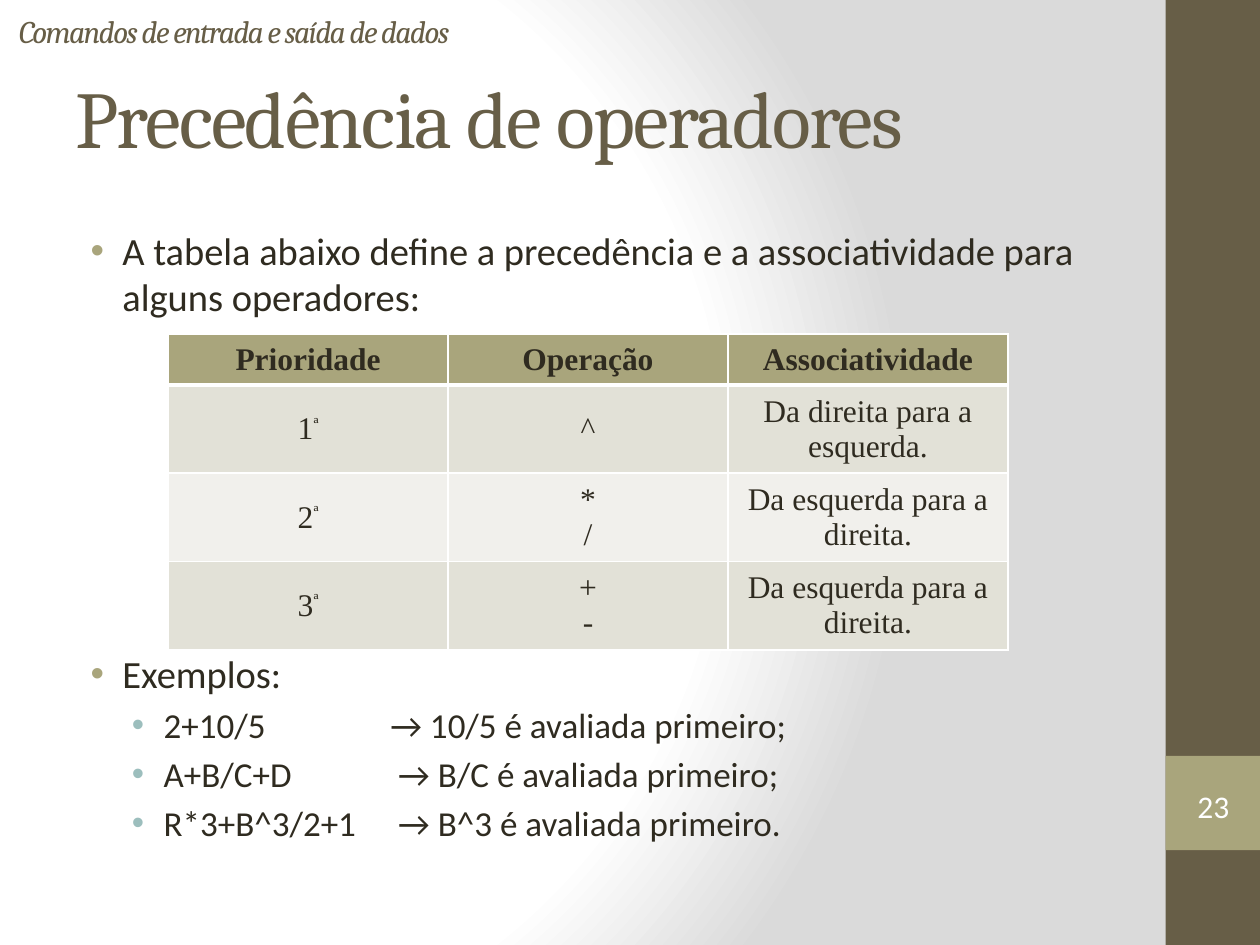
from dataclasses import dataclass
from typing import Any

from pptx import Presentation
from pptx.dml.color import RGBColor
from pptx.enum.shapes import MSO_SHAPE
from pptx.enum.text import MSO_ANCHOR, PP_ALIGN
from pptx.oxml import parse_xml
from pptx.oxml.ns import nsdecls
from pptx.util import Cm, Pt

COLORS = {
    "brown": "675E47",
    "olive": "A9A57C",
    "teal": "9CBEBD",
    "ink": "2F2B20",
    "white": "FFFFFF",
    "gray": "DADADA",
    "band_dark": "E2E1D7",
    "band_light": "F1F0EC",
}
TITLE = {"name": "Cambria", "size": Pt(46)}
HEADER = {"name": "Cambria", "size": Pt(18), "italic": True}
BODY = {"name": "Calibri", "size": Pt(22)}
EXAMPLE = {"name": "Calibri", "size": Pt(20)}
NUMBER = {"name": "Calibri", "size": Pt(18)}
CELL = {"name": "Times New Roman", "size": Pt(18), "bold": False}
HEADING = {**CELL, "bold": True}


@dataclass(frozen=True)
class Box:
    left: float
    top: float
    width: float
    height: float

    def lengths(self) -> list[Cm]:
        return [Cm(value) for value in (self.left, self.top, self.width, self.height)]


@dataclass(frozen=True)
class Bullet:
    text: str
    style: dict[str, Any]
    color: str
    indent: float


@dataclass(frozen=True)
class Row:
    cells: tuple[str, str, str]
    fill: str
    style: dict[str, Any]
    height: float
    top_line: float = 1
    bottom_line: float = 1


BANDS = [
    (Box(23.5, 0, 1.9, 19.05), "brown"),
    (Box(23.5, 15.24, 1.9, 1.9), "olive"),
]
INTRODUCTION = [
    Bullet("A tabela abaixo define a precedência e a associatividade para alguns operadores:",
           BODY, "olive", 0.95),
]
EXAMPLES = [
    Bullet("Exemplos:", BODY, "olive", 0.95),
    Bullet("2+10/5\t\t→ 10/5 é avaliada primeiro;", EXAMPLE, "teal", 1.78),
    Bullet("A+B/C+D\t\t → B/C é avaliada primeiro;", EXAMPLE, "teal", 1.78),
    Bullet("R*3+B^3/2+1\t → B^3 é avaliada primeiro.", EXAMPLE, "teal", 1.78),
]
ROWS = [
    Row(("Prioridade", "Operação", "Associatividade"), "olive", HEADING, 1.03, bottom_line=3),
    Row(("1ª", "^", "Da direita para a esquerda."), "band_dark", CELL, 1.78, top_line=3),
    Row(("2ª", "*\n/", "Da esquerda para a direita."), "band_light", CELL, 1.78),
    Row(("3ª", "+\n-", "Da esquerda para a direita."), "band_dark", CELL, 1.78),
]


def rgb(color: str) -> RGBColor:
    return RGBColor.from_string(COLORS[color])


def apply_font(font, style: dict[str, Any], color: str) -> None:
    for name, value in style.items():
        setattr(font, name, value)
    font.color.rgb = rgb(color)


def set_background(slide) -> None:
    stops = "".join(
        f'<a:gs pos="{position * 1000}"><a:srgbClr val="{COLORS[color]}"/></a:gs>'
        for position, color in ((0, "white"), (75, "white"), (100, "gray"))
    )
    slide._element.cSld.insert(0, parse_xml(
        f'<p:bg {nsdecls("p", "a")}><p:bgPr><a:gradFill rotWithShape="1">'
        f'<a:gsLst>{stops}</a:gsLst><a:path path="circle">'
        '<a:fillToRect l="20000" t="50000" r="100000" b="50000"/></a:path>'
        '</a:gradFill><a:effectLst/></p:bgPr></p:bg>'
    ))


def add_band(slide, box: Box, color: str) -> None:
    shape = slide.shapes.add_shape(MSO_SHAPE.RECTANGLE, *box.lengths())
    shape.shadow.inherit = False
    shape.fill.solid()
    shape.fill.fore_color.rgb = rgb(color)
    shape.line.fill.background()


def add_text_frame(slide, box: Box, anchor=MSO_ANCHOR.TOP):
    frame = slide.shapes.add_textbox(*box.lengths()).text_frame
    frame.word_wrap = True
    frame.vertical_anchor = anchor
    return frame


def add_heading(slide, box: Box, text: str, style: dict[str, Any]) -> None:
    frame = add_text_frame(slide, box, MSO_ANCHOR.MIDDLE)
    run = frame.paragraphs[0].add_run()
    run.text = text
    apply_font(run.font, style, "brown")
    run._r.get_or_add_rPr().set("spc", "-100")


def add_bullets(slide, box: Box, bullets: list[Bullet]) -> None:
    frame = add_text_frame(slide, box)
    for index, bullet in enumerate(bullets):
        paragraph = frame.add_paragraph() if index else frame.paragraphs[0]
        properties = paragraph._p.get_or_add_pPr()
        properties.set("marL", str(Cm(bullet.indent)))
        properties.set("indent", str(Cm(-0.64)))
        for content in (
            f'<a:buClr {nsdecls("a")}><a:srgbClr val="{COLORS[bullet.color]}"/></a:buClr>',
            f'<a:buFont {nsdecls("a")} typeface="Arial"/>',
            f'<a:buChar {nsdecls("a")} char="•"/>',
        ):
            properties.append(parse_xml(content))
        if index:
            paragraph.space_before = Pt(4)
        run = paragraph.add_run()
        run.text = bullet.text
        apply_font(run.font, bullet.style, "ink")


def set_borders(cell, row: Row) -> None:
    widths = {"lnL": 1, "lnR": 1, "lnT": row.top_line, "lnB": row.bottom_line}
    for index, (side, width) in enumerate(widths.items()):
        cell._tc.get_or_add_tcPr().insert(index, parse_xml(
            f'<a:{side} {nsdecls("a")} w="{Pt(width)}"><a:solidFill>'
            f'<a:srgbClr val="{COLORS["white"]}"/></a:solidFill></a:{side}>'
        ))


def fill_cell(cell, text: str, row: Row) -> None:
    cell.fill.solid()
    cell.fill.fore_color.rgb = rgb(row.fill)
    cell.vertical_anchor = MSO_ANCHOR.MIDDLE
    set_borders(cell, row)
    for index, line in enumerate(text.split("\n")):
        frame = cell.text_frame
        paragraph = frame.add_paragraph() if index else frame.paragraphs[0]
        paragraph.alignment = PP_ALIGN.CENTER
        pieces = [line[:-1], "ª"] if line.endswith("ª") else [line]
        for piece in pieces:
            run = paragraph.add_run()
            run.text = piece
            apply_font(run.font, row.style, "ink")
            if piece == "ª":
                run._r.get_or_add_rPr().set("baseline", "30000")


def add_precedence_table(slide, box: Box) -> None:
    table = slide.shapes.add_table(len(ROWS), 3, *box.lengths()).table
    table.horz_banding = False
    for column in table.columns:
        column.width = Cm(box.width / 3)
    for row_index, row in enumerate(ROWS):
        table.rows[row_index].height = Cm(row.height)
        for column_index, text in enumerate(row.cells):
            fill_cell(table.cell(row_index, column_index), text, row)


def add_slide_number(slide, box: Box, text: str) -> None:
    shape = slide.shapes.add_shape(MSO_SHAPE.DOUBLE_BRACKET, *box.lengths())
    shape.shadow.inherit = False
    shape.fill.background()
    shape.line.fill.background()
    frame = shape.text_frame
    for side in ("left", "top", "right", "bottom"):
        setattr(frame, f"margin_{side}", 0)
    frame.vertical_anchor = MSO_ANCHOR.MIDDLE
    paragraph = frame.paragraphs[0]
    paragraph.alignment = PP_ALIGN.CENTER
    run = paragraph.add_run()
    run.text = text
    apply_font(run.font, NUMBER, "white")


def main() -> None:
    presentation = Presentation()
    presentation.slide_width, presentation.slide_height = Cm(25.4), Cm(19.05)
    slide = presentation.slides.add_slide(presentation.slide_layouts[6])
    set_background(slide)
    for box, color in BANDS:
        add_band(slide, box, color)
    add_heading(slide, Box(1.27, 0.76, 21.17, 3.18), "Precedência de operadores", TITLE)
    add_bullets(slide, Box(1.27, 4.45, 21.17, 2.2), INTRODUCTION)
    add_bullets(slide, Box(1.27, 12.98, 21.17, 4.8), EXAMPLES)
    add_slide_number(slide, Box(23.7, 15.7, 1.52, 1.09), "23")
    add_heading(slide, Box(0.13, 0.2, 21.13, 0.86), "Comandos de entrada e saída de dados", HEADER)
    add_precedence_table(slide, Box(3.39, 6.73, 16.93, 6.37))
    presentation.save("out.pptx")


if __name__ == "__main__":
    main()
